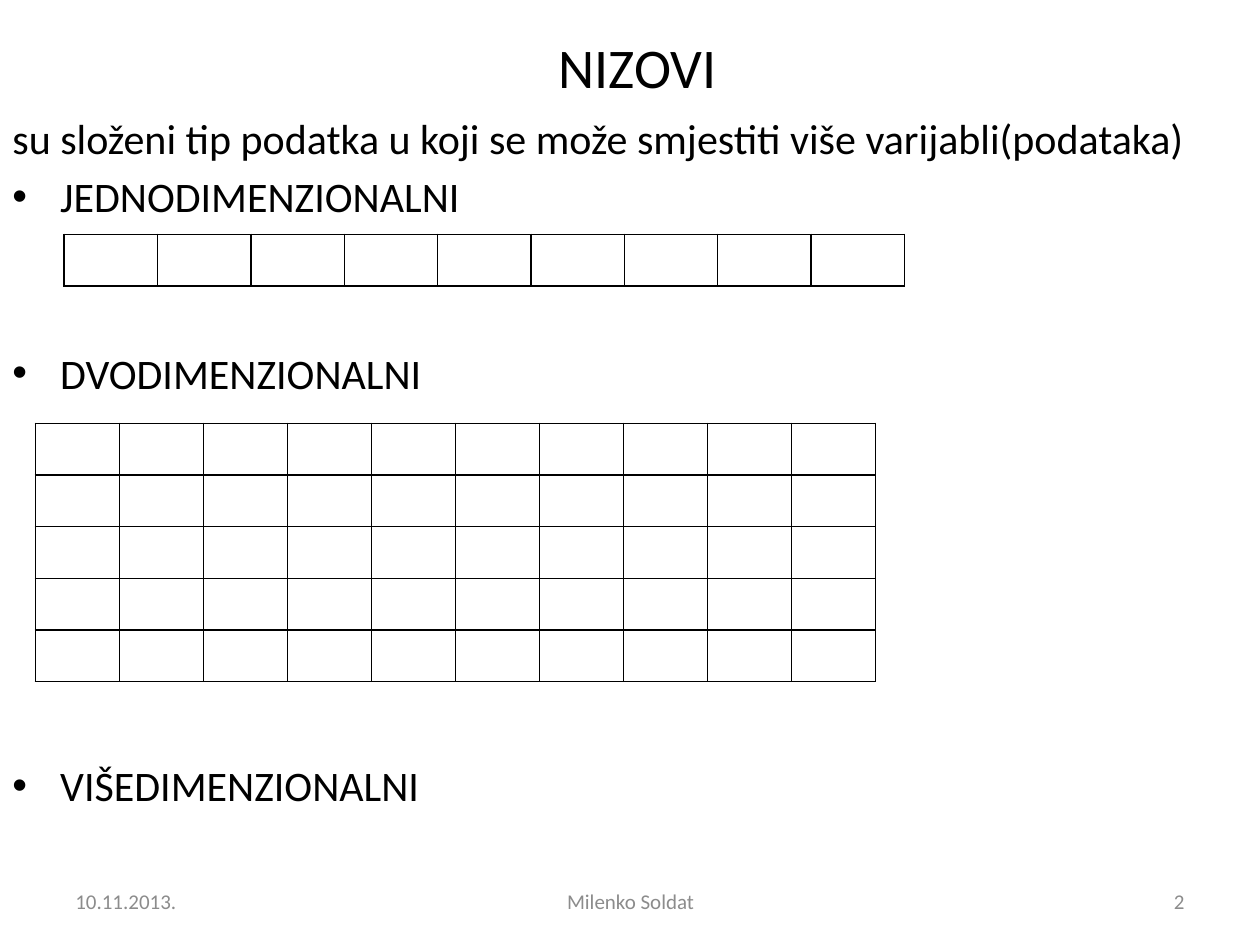
from lxml.etree import SubElement
from pptx import Presentation
from pptx.dml.color import RGBColor
from pptx.enum.text import MSO_ANCHOR, PP_ALIGN
from pptx.oxml.ns import qn
from pptx.util import Inches, Pt

BLACK = RGBColor(0, 0, 0)
GRAY = RGBColor(0x8C, 0x8C, 0x8C)
WIDE, HIGH = 10, 7.5
GRID = 6.67
ROW = 0.41
INDENT = 0.38
FOOT = 6.95

TITLE = {"name": "Calibri", "size": Pt(32)}
BODY = {"name": "Calibri", "size": Pt(24)}
SMALL = {"name": "Calibri", "size": Pt(12)}

LINES = [
    ("su složeni tip podatka u koji se može smjestiti više varijabli(podataka)", 0, False),
    ("JEDNODIMENZIONALNI", 4.8, True),
    ("DVODIMENZIONALNI", 72, True),
    ("VIŠEDIMENZIONALNI", 207, True),
]
FOOTER = [
    (0.5, 2.33, "10.11.2013.", PP_ALIGN.LEFT),
    (3.42, 3.17, "Milenko Soldat", PP_ALIGN.CENTER),
    (7.17, 2.33, "2", PP_ALIGN.RIGHT),
]


def apply(item, values):
    for key, value in values.items():
        setattr(item, key, value)


def add_frame(slide, area, anchor):
    frame = slide.shapes.add_textbox(*map(Inches, area)).text_frame
    apply(frame, {"word_wrap": True, "vertical_anchor": anchor})
    return frame


def write(para, text, font, color, **form):
    apply(para, form)
    run = para.add_run()
    run.text = text
    apply(run.font, font)
    run.font.color.rgb = color


def add_line(slide, area, text, font, color, align):
    frame = add_frame(slide, area, MSO_ANCHOR.MIDDLE)
    write(frame.paragraphs[0], text, font, color, alignment=align)


def add_bullet(para):
    props = para._p.get_or_add_pPr()
    props.set("marL", str(Inches(INDENT)))
    props.set("indent", str(-Inches(INDENT)))
    SubElement(props, qn("a:buFont"), typeface="Arial")
    SubElement(props, qn("a:buChar"), char="•")


def add_body(slide):
    frame = add_frame(slide, (0, 0.84, WIDE, 5.83), MSO_ANCHOR.TOP)
    for place, (text, gap, bullet) in enumerate(LINES):
        para = frame.add_paragraph() if place else frame.paragraphs[0]
        write(para, text, BODY, BLACK, space_before=Pt(gap))
        if bullet:
            add_bullet(para)


def add_border(cell):
    props = cell._tc.get_or_add_tcPr()
    for side in ("a:lnL", "a:lnR", "a:lnT", "a:lnB"):
        line = SubElement(props, qn(side), w=str(Pt(1)))
        fill = SubElement(line, qn("a:solidFill"))
        SubElement(fill, qn("a:srgbClr"), val=str(BLACK))


def add_grid(slide, left, top, rows, cols):
    area = map(Inches, (left, top, GRID, ROW * rows))
    table = slide.shapes.add_table(rows, cols, *area).table
    apply(table, {"first_row": False, "horz_banding": False})
    for cell in table.iter_cells():
        add_border(cell)
        cell.fill.background()


def main():
    deck = Presentation()
    apply(deck, {"slide_width": Inches(WIDE), "slide_height": Inches(HIGH)})
    slide = deck.slides.add_slide(deck.slide_layouts[6])
    add_line(slide, (0.51, 0.13, 9, 0.79), " NIZOVI", TITLE, BLACK, PP_ALIGN.CENTER)
    add_body(slide)
    add_grid(slide, 0.51, 1.86, 1, 9)
    add_grid(slide, 0.28, 3.36, 5, 10)
    for left, width, text, align in FOOTER:
        add_line(slide, (left, FOOT, width, 0.4), text, SMALL, GRAY, align)
    deck.save("out.pptx")


if __name__ == "__main__":
    main()
